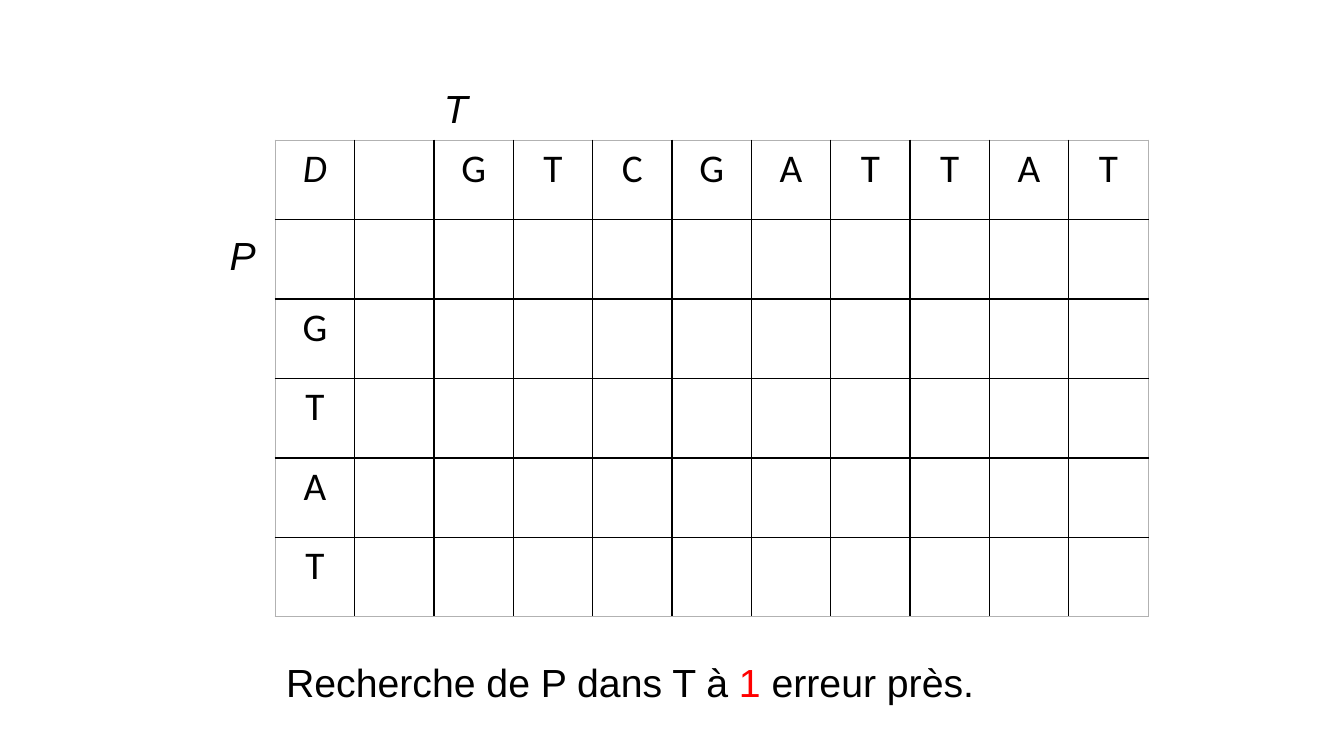
from dataclasses import dataclass

from lxml import etree
from pptx import Presentation
from pptx import util as u
from pptx.dml.color import RGBColor
from pptx.enum import text as t
from pptx.oxml.ns import qn


@dataclass(frozen=True)
class Theme:
    ink: str = "000000"
    accent: str = "FF0000"
    frame: str = "B2B2B2"
    size: int = 28
    label_font: str = "Arial"
    table_font: str = "Calibri"
    border: float = 1


THEME = Theme()
SLIDE_WIDTH, SLIDE_HEIGHT = 13.33, 7.5
TEXT, PATTERN = "GTCGATTAT", "GTAT"
COLUMNS, ROWS = len(TEXT) + 2, len(PATTERN) + 2
MATRIX_BOX = (2.73, 1.39, 8.66, 4.73)


def write(paragraph, content, font=THEME.label_font, color=THEME.ink,
          italic=False, align=t.PP_ALIGN.LEFT):
    paragraph.alignment = align
    run = paragraph.add_run()
    run.text = content
    run.font.name = font
    run.font.size = u.Pt(THEME.size)
    run.font.italic = italic
    run.font.color.rgb = RGBColor.from_string(color)


def add_label(slide, box, pieces, italic=False):
    """Place one line of text given as (content, color) pieces."""
    shape = slide.shapes.add_textbox(*map(u.Inches, box))
    frame = shape.text_frame
    frame.word_wrap = False
    frame.auto_size = t.MSO_AUTO_SIZE.SHAPE_TO_FIT_TEXT
    for content, color in pieces:
        write(frame.paragraphs[0], content, color=color, italic=italic)


def set_borders(cell, row, column):
    """Grey on the outer frame of the matrix, black inside it."""
    outer_sides = {"lnL": column == 0, "lnR": column == COLUMNS - 1,
                   "lnT": row == 0, "lnB": row == ROWS - 1}
    properties = cell._tc.get_or_add_tcPr()
    for side, is_outer in outer_sides.items():
        line = etree.SubElement(properties, qn(f"a:{side}"),
                                w=str(u.Pt(THEME.border)))
        fill = etree.SubElement(line, qn("a:solidFill"))
        etree.SubElement(fill, qn("a:srgbClr"),
                         val=THEME.frame if is_outer else THEME.ink)


def add_matrix(slide, box):
    table = slide.shapes.add_table(ROWS, COLUMNS, *map(u.Inches, box)).table
    table.first_row = table.horz_banding = False
    for column in table.columns:
        column.width = u.Inches(box[2] / COLUMNS)
    for row in table.rows:
        row.height = u.Inches(box[3] / ROWS)

    letters = {(0, 0): "D"}
    letters.update({(0, i): letter for i, letter in enumerate(TEXT, 2)})
    letters.update({(i, 0): letter for i, letter in enumerate(PATTERN, 2)})
    for row in range(ROWS):
        for column in range(COLUMNS):
            cell = table.cell(row, column)
            set_borders(cell, row, column)
            cell.fill.background()
            if (row, column) in letters:
                write(cell.text_frame.paragraphs[0], letters[row, column],
                      font=THEME.table_font, italic=row == column == 0,
                      align=t.PP_ALIGN.CENTER)


def add_matrix_slide(presentation):
    slide = presentation.slides.add_slide(presentation.slide_layouts[6])
    left, top, width, height = MATRIX_BOX
    label_height = 0.57
    add_matrix(slide, MATRIX_BOX)
    add_label(slide, (left + 2 * width / COLUMNS, top - 0.6, 0.44, label_height),
              [("T", THEME.ink)], italic=True)
    add_label(slide, (left - 0.55, top + 0.86, 0.46, label_height),
              [("P", THEME.ink)], italic=True)
    add_label(slide, (left + 0.01, top + height + 0.36, 7.31, label_height),
              [("Recherche de P dans T à ", THEME.ink), ("1", THEME.accent),
               (" erreur près.", THEME.ink)])


def main():
    presentation = Presentation()
    presentation.slide_width = u.Inches(SLIDE_WIDTH)
    presentation.slide_height = u.Inches(SLIDE_HEIGHT)
    add_matrix_slide(presentation)
    presentation.save("out.pptx")


if __name__ == "__main__":
    main()
